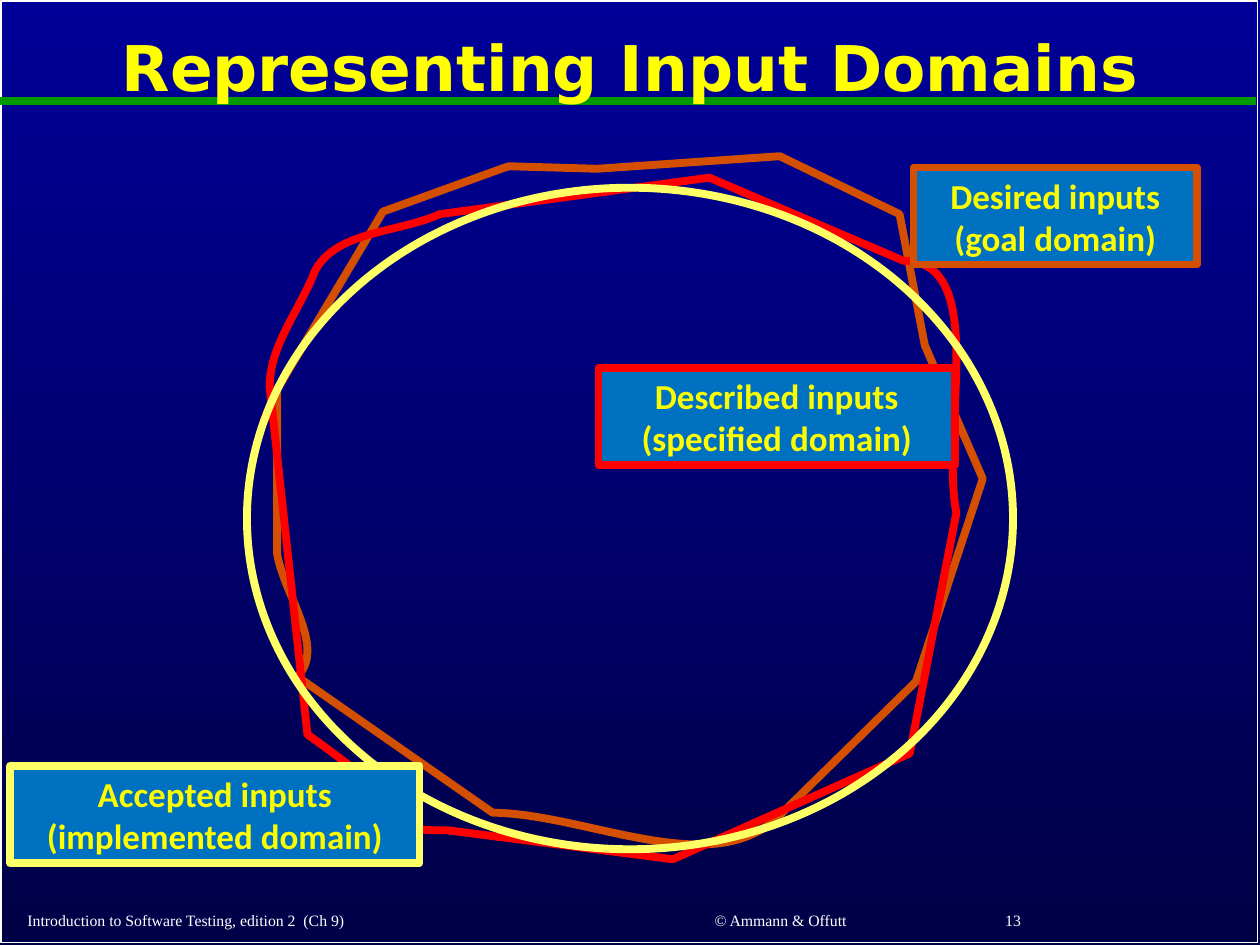
"""Build a slide comparing the desired, described and accepted input domains."""
import pptx
import pptx.dml.color
import pptx.enum.shapes
import pptx.enum.text
import pptx.oxml
import pptx.oxml.ns
import pptx.util

Inches = pptx.util.Inches
RGBColor = pptx.dml.color.RGBColor
Shapes = pptx.enum.shapes.MSO_SHAPE
Align = pptx.enum.text.PP_ALIGN
Anchor = pptx.enum.text.MSO_ANCHOR
qualified = pptx.oxml.ns.qn

SKY = RGBColor(0x00, 0x00, 0x99)
NIGHT = RGBColor(0x00, 0x00, 0x47)
WHITE = RGBColor(0xFF, 0xFF, 0xFF)
GREEN = RGBColor(0x00, 0x99, 0x00)
ORANGE = RGBColor(0xD4, 0x50, 0x00)
RED = RGBColor(0xFF, 0x00, 0x00)
PALE_YELLOW = RGBColor(0xFF, 0xFF, 0x66)
YELLOW = RGBColor(0xFF, 0xFF, 0x00)
LEMON = RGBColor(0xFA, 0xFD, 0x00)
BLUE = RGBColor(0x00, 0x70, 0xC0)

OUTLINE = 4.5

DESIRED_DOMAIN = [
    (4.05, 1.32),
    (4.04, 1.32, 4.03, 1.32, 4.01, 1.33),
    (4, 1.33, 3.98, 1.34, 3.98, 1.34),
    (3.04, 1.68), (2.2, 3.09),
    (2.2, 3.53, 2.2, 3.96, 2.2, 4.4),
    (2.26, 4.73, 2.59, 5.14, 2.36, 5.37),
    (3.91, 6.45),
    (4.67, 6.46, 5.66, 7, 6.19, 6.47),
    (7.27, 5.41), (7.8, 3.8), (7.34, 2.74), (7.14, 1.7), (6.19, 1.24), (4.74, 1.34),
    (4.05, 1.32),
]
DESCRIBED_DOMAIN = [
    (3.49, 1.7),
    (3.16, 1.85, 2.67, 1.83, 2.5, 2.15),
    (2.38, 2.46, 2.14, 2.74, 2.14, 3.07),
    (2.44, 5.83),
    (3.53, 6.6, 3.08, 6.59, 3.55, 6.59),
    (5.34, 6.82), (7.22, 5.98), (7.59, 4.07),
    (7.46, 3.4, 7.86, 2.07, 7.17, 2.07),
    (5.63, 1.41), (3.49, 1.7),
]
LABELS = [
    ("Desired inputs (", "goal ", (7.25, 1.33, 2.25, 0.77), ORANGE),
    ("Described inputs (", "specified ", (4.75, 2.92, 2.83, 0.77), RED),
    ("Accepted inputs (", "implemented ", (0.08, 6.08, 3.25, 0.77), PALE_YELLOW),
]
FOOTERS = [
    ("Introduction to Software Testing, edition 2  (Ch 9)", (0.12, 7.12, 4.27, 0.31), Align.LEFT),
    ("© Ammann & Offutt", (4.61, 7.15, 3.17, 0.28), Align.CENTER),
    ("13", (7.88, 7.14, 1.97, 0.29), Align.LEFT),
]


def paint_background(slide):
    """Fill the slide with a gradient that darkens downwards."""
    fill = slide.background.fill
    fill.gradient()
    fill.gradient_angle = 270
    for stop, color in zip(fill.gradient_stops, (SKY, NIGHT)):
        stop.color.rgb = color


def style_shape(shape, line_color, line_width, fill_color=None):
    """Set the outline and fill of a shape and drop its shadow."""
    shape.shadow.inherit = False
    shape.line.color.rgb = line_color
    shape.line.width = pptx.util.Pt(line_width)
    if fill_color is None:
        shape.fill.background()
    else:
        shape.fill.solid()
        shape.fill.fore_color.rgb = fill_color


def add_preset(slide, preset, box, line_color, line_width=OUTLINE, fill_color=None):
    """Add a preset shape in a box given in inches."""
    shape = slide.shapes.add_shape(preset, *map(Inches, box))
    style_shape(shape, line_color, line_width, fill_color)
    return shape


def add_rule(slide, start, end, color):
    """Add a straight rule between two points."""
    rule = slide.shapes.add_connector(
        pptx.enum.shapes.MSO_CONNECTOR.STRAIGHT, *map(Inches, start + end))
    rule.line.color.rgb = color
    rule.line.width = pptx.util.Pt(OUTLINE)
    properties = rule.element.find(qualified("p:spPr"))
    properties.append(properties.makeelement(qualified("a:effectLst"), {}))


def bend_segments(shape, segments):
    """Join each three lines that stand for a curve into one cubic curve."""
    lines = iter(list(shape.element.iter(qualified("a:lnTo"))))
    for segment in segments:
        line = next(lines)
        if len(segment) == 2:
            continue
        curve = line.makeelement(qualified("a:cubicBezTo"), {})
        line.addprevious(curve)
        for part in (line, next(lines), next(lines)):
            curve.append(part[0])
            part.getparent().remove(part)


def add_domain(slide, segments, color):
    """Add a closed outline made of straight and curved segments."""
    points = [tuple(map(Inches, segment[index:index + 2]))
              for segment in segments for index in range(0, len(segment), 2)]
    builder = slide.shapes.build_freeform(*points[0])
    builder.add_line_segments(points[1:], close=True)
    shape = builder.convert_to_shape()
    bend_segments(shape, segments[1:])
    style_shape(shape, color, OUTLINE)


def write_text(shape, runs, font, size, bold=False, align=Align.CENTER,
               anchor=Anchor.MIDDLE, spacing=None):
    """Write one paragraph of (text, color) runs into a shape."""
    frame = shape.text_frame
    frame.word_wrap = True
    frame.vertical_anchor = anchor
    paragraph = frame.paragraphs[0]
    paragraph.alignment = align
    paragraph.line_spacing = spacing
    for text, color in runs:
        run = paragraph.add_run()
        run.text = text
        run.font.name = font
        run.font.size = pptx.util.Pt(size)
        run.font.bold = bold
        run.font.color.rgb = color


def add_text(slide, text, box, color, **style):
    """Add a text box in a box given in inches."""
    shape = slide.shapes.add_textbox(*map(Inches, box))
    write_text(shape, [(text, color)], **style)


def main():
    """Build and save the slide."""
    presentation = pptx.Presentation()
    presentation.slide_width = Inches(10)
    presentation.slide_height = Inches(7.5)
    slide = presentation.slides.add_slide(presentation.slide_layouts[6])
    paint_background(slide)
    add_preset(slide, Shapes.RECTANGLE, (0.01, 0.01, 9.97, 7.47), WHITE, line_width=1)
    add_rule(slide, (0, 0.8), (9.97, 0.8), GREEN)
    add_domain(slide, DESIRED_DOMAIN, ORANGE)
    add_text(slide, "Representing Input Domains", (0.1, 0.11, 9.8, 0.91), YELLOW,
             font="DejaVu Sans", size=36, bold=True, spacing=0.9)
    for text, box, align in FOOTERS:
        add_text(slide, text, box, WHITE, font="Times New Roman", size=9,
                 align=align, anchor=Anchor.BOTTOM)
    add_domain(slide, DESCRIBED_DOMAIN, RED)
    add_preset(slide, Shapes.OVAL, (1.96, 1.49, 6.08, 5.25), PALE_YELLOW)
    for opening, kind, box, color in LABELS:
        label = add_preset(slide, Shapes.RECTANGLE, box, color, fill_color=BLUE)
        write_text(label, [(opening, LEMON), (kind, YELLOW), ("domain)", LEMON)],
                   font="Calibri", size=20, bold=True)
    presentation.save("out.pptx")


if __name__ == "__main__":
    main()
